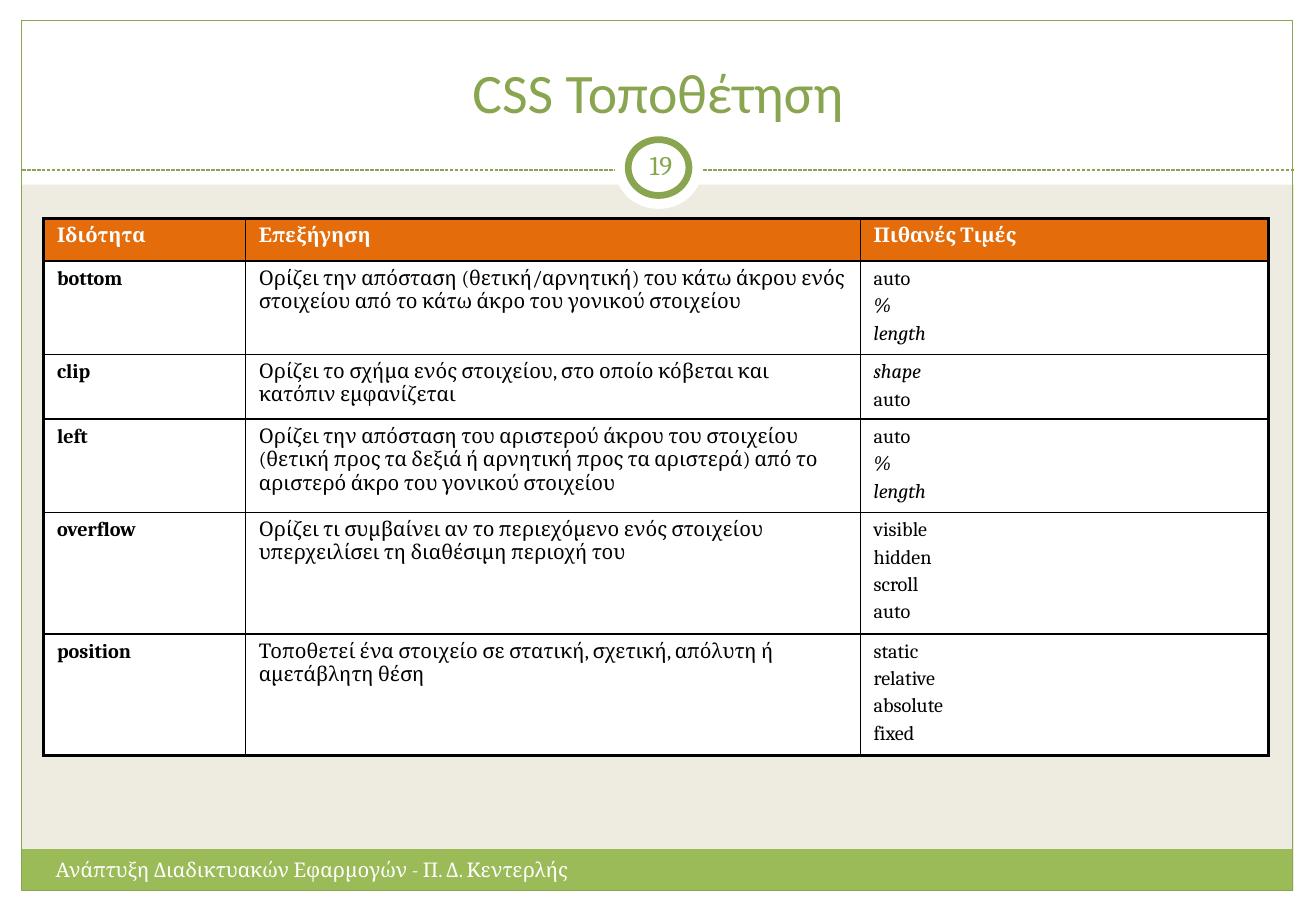
from lxml.etree import SubElement
from pptx import Presentation
from pptx.dml.color import RGBColor
from pptx.enum.dml import MSO_LINE
from pptx.enum.shapes import MSO_CONNECTOR, MSO_SHAPE
from pptx.enum.text import MSO_ANCHOR, MSO_AUTO_SIZE, PP_ALIGN
from pptx.oxml.ns import qn
from pptx.util import Inches, Pt

WHITE = RGBColor(0xFF, 0xFF, 0xFF)
BLACK = RGBColor(0x00, 0x00, 0x00)
BEIGE = RGBColor(0xEE, 0xEC, 0xE1)
GREEN = RGBColor(0x9B, 0xBB, 0x59)
DARK_GREEN = RGBColor(0x89, 0xA5, 0x4F)
ORANGE = RGBColor(0xE4, 0x6C, 0x0A)

PROPERTIES = [
    ("bottom", "Ορίζει την απόσταση (θετική/αρνητική) του κάτω άκρου ενός στοιχείου "
     "από το κάτω άκρο του γονικού στοιχείου", ["auto", "%", "length"]),
    ("clip", "Ορίζει το σχήμα ενός στοιχείου, στο οποίο κόβεται και κατόπιν εμφανίζεται",
     ["shape", "auto"]),
    ("left", "Ορίζει την απόσταση του αριστερού άκρου του στοιχείου (θετική προς τα δεξιά "
     "ή αρνητική προς τα αριστερά) από το αριστερό άκρο του γονικού στοιχείου",
     ["auto", "%", "length"]),
    ("overflow", "Ορίζει τι συμβαίνει αν το περιεχόμενο ενός στοιχείου υπερχειλίσει "
     "τη διαθέσιμη περιοχή του", ["visible", "hidden", "scroll", "auto"]),
    ("position", "Τοποθετεί ένα στοιχείο σε στατική, σχετική, απόλυτη ή αμετάβλητη θέση",
     ["static", "relative", "absolute", "fixed"]),
]
ITALIC_VALUES = {"%", "length", "shape"}


def write(paragraph, text, size, color, font="Cambria", bold=False, italic=False):
    run = paragraph.add_run()
    run.text = text
    formats = {"name": font, "size": Pt(size), "bold": bold, "italic": italic}
    for attribute, value in formats.items():
        setattr(run.font, attribute, value)
    run.font.color.rgb = color


def set_border(cell, side, width):
    line = SubElement(cell._tc.get_or_add_tcPr(), qn(f"a:ln{side}"), w=str(Pt(width)))
    fill = SubElement(line, qn("a:solidFill"))
    SubElement(fill, qn("a:srgbClr"), val=str(BLACK))


prs = Presentation()
prs.slide_width, prs.slide_height = Inches(10.83), Inches(7.5)
slide = prs.slides.add_slide(prs.slide_layouts[5])
slide.background.fill.solid()
slide.background.fill.fore_color.rgb = BEIGE
shapes = slide.shapes

# White margins, footer band, frame, dashed rule and number badge
RECT, OVAL = MSO_SHAPE.RECTANGLE, MSO_SHAPE.OVAL
for kind, box, fill, line_width in [
    (RECT, (0, 7.33, 10.83, 0.17), WHITE, None),
    (RECT, (0, 0, 10.83, 1.52), WHITE, None),
    (RECT, (0, 0, 0.18, 7.5), WHITE, None),
    (RECT, (10.65, 0, 0.18, 7.5), WHITE, None),
    (RECT, (0.18, 6.99, 10.46, 0.34), GREEN, None),
    (RECT, (0.18, 0.17, 10.46, 7.16), None, 0.75),
    (None, (0.18, 1.4, 10.65, 1.4), None, 0.75),
    (OVAL, (5.06, 1.05, 0.72, 0.67), WHITE, None),
    (OVAL, (5.17, 1.15, 0.5, 0.46), WHITE, 4),
]:
    lengths = [Inches(value) for value in box]
    if kind is None:
        part = shapes.add_connector(MSO_CONNECTOR.STRAIGHT, *lengths)
        part.line.dash_style = MSO_LINE.SQUARE_DOT
    else:
        part = shapes.add_shape(kind, *lengths)
        part.shadow.inherit = False
        if fill is None:
            part.fill.background()
        else:
            part.fill.solid()
            part.fill.fore_color.rgb = fill
    if line_width is None:
        part.line.fill.background()
    else:
        part.line.color.rgb = DARK_GREEN
        part.line.width = Pt(line_width)
    if kind is None:
        SubElement(part._element.spPr, qn("a:effectLst"))

# Title, brought in front of the white margin
title = shapes.title
title.left, title.top = Inches(0.36), Inches(0.25)
title.width, title.height = Inches(10.11), Inches(0.83)
shapes._spTree.append(title._element)
title.text_frame.auto_size = MSO_AUTO_SIZE.NONE
title.text_frame.vertical_anchor = MSO_ANCHOR.BOTTOM
title.text_frame.paragraphs[0].alignment = PP_ALIGN.CENTER
write(title.text_frame.paragraphs[0], "CSS Τοποθέτηση", 33, DARK_GREEN, "Calibri")

# Footer
footer = shapes.add_textbox(Inches(0.36), Inches(7.01), Inches(5.06), Inches(0.4)).text_frame
footer.word_wrap = True
write(footer.paragraphs[0], "Ανάπτυξη Διαδικτυακών Εφαρμογών - Π. Δ. Κεντερλής", 12, WHITE)

# Slide number
number = shapes.add_textbox(Inches(5.17), Inches(1.12), Inches(0.54), Inches(0.48)).text_frame
number.word_wrap = True
number.vertical_anchor = MSO_ANCHOR.MIDDLE
number.margin_left = number.margin_right = Inches(0.05)
number.paragraphs[0].alignment = PP_ALIGN.CENTER
write(number.paragraphs[0], "19", 16, DARK_GREEN)

# Table of CSS properties
rows = [("Ιδιότητα", "Επεξήγηση", ["Πιθανές Τιμές"])] + PROPERTIES
heights = [0.35] + [0.07 + 0.225 * len(values) for _, _, values in PROPERTIES]
widths = [1.66, 5.06, 3.36]
table = shapes.add_table(len(rows), len(widths), Inches(0.36), Inches(1.8),
                         Inches(sum(widths)), Inches(sum(heights))).table
for column, width in zip(table.columns, widths):
    column.width = Inches(width)
for row, height in zip(table.rows, heights):
    row.height = Inches(height)

last_row, last_column = len(rows) - 1, len(widths) - 1
for r, (name, explanation, values) in enumerate(rows):
    for c, lines in enumerate([[name], [explanation], values]):
        cell = table.cell(r, c)
        cell.margin_left = cell.margin_right = Inches(0.11)
        cell.margin_top = cell.margin_bottom = Inches(0.05)
        outer_sides = {"L": c == 0, "R": c == last_column, "T": r == 0, "B": r == last_row}
        for side, is_outer in outer_sides.items():
            set_border(cell, side, 2.25 if is_outer else 1)
        cell.fill.solid()
        cell.fill.fore_color.rgb = ORANGE if r == 0 else WHITE
        for i, text in enumerate(lines):
            frame = cell.text_frame
            paragraph = frame.add_paragraph() if i else frame.paragraphs[0]
            paragraph.space_before = Pt(2.4)
            write(paragraph, text, 12, WHITE if r == 0 else BLACK,
                  bold=r == 0 or c == 0, italic=text in ITALIC_VALUES)

prs.save("out.pptx")
